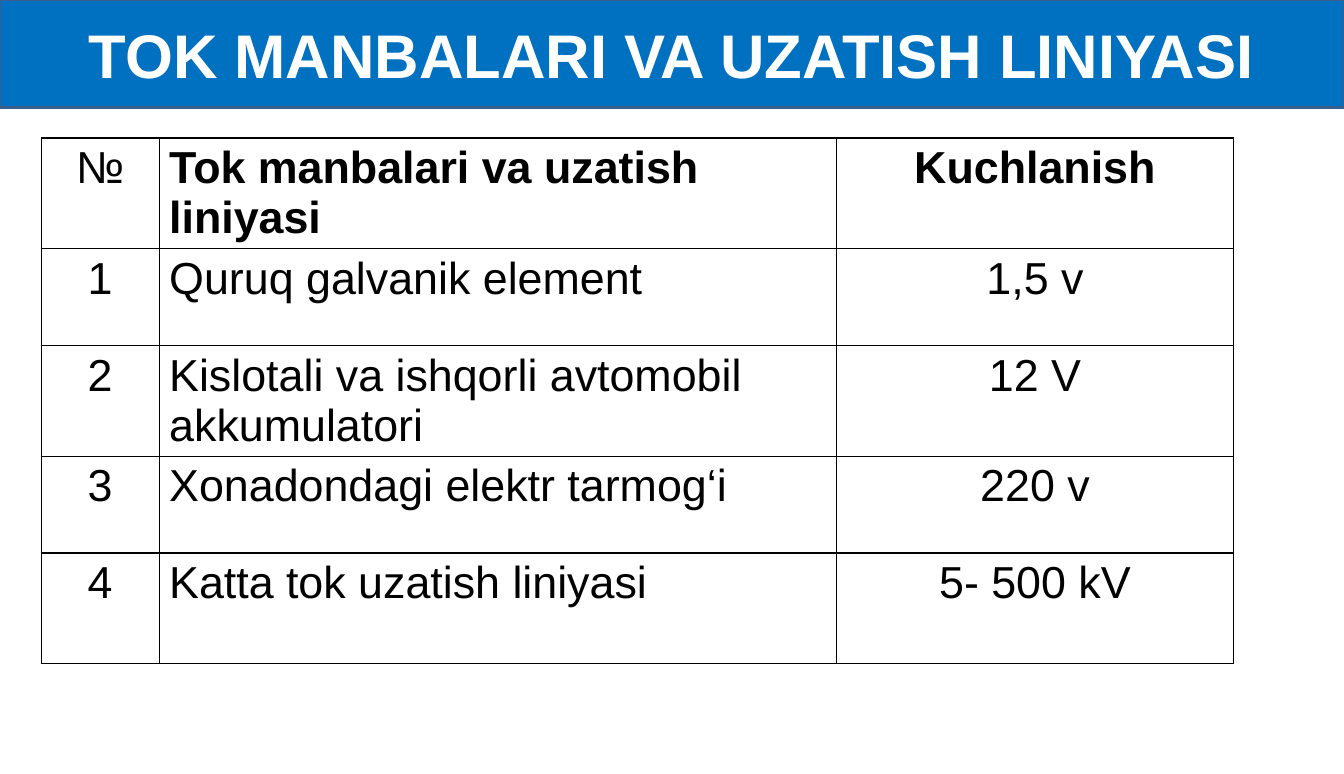
from lxml import etree
from pptx import Presentation
from pptx.dml.color import RGBColor
from pptx.enum.text import MSO_ANCHOR, MSO_AUTO_SIZE, PP_ALIGN
from pptx.oxml.ns import qn
from pptx.util import Cm, Pt

CENTER, LEFT = PP_ALIGN.CENTER, PP_ALIGN.LEFT
MIDDLE = MSO_ANCHOR.MIDDLE
NO_AUTOFIT = MSO_AUTO_SIZE.NONE
TITLE_ONLY = 5

COLORS = {
    "banner": "0070C0",
    "banner_line": "3A5F8C",
    "title": "FFFFFF",
    "text": "000000",
    "border": "000000",
}
SLIDE_WIDTH, SLIDE_HEIGHT = Cm(33.87), Cm(19.51)
BANNER_BOX = (0, 0, SLIDE_WIDTH, Cm(2.72))
TABLE_BOX = (Cm(1.04), Cm(3.48), Cm(30.05), Cm(13.25))
COLUMN_WIDTHS = (2.97, 17.07, 10.01)
ROW_HEIGHTS = (2.79, 2.44, 2.79, 2.44, 2.79)
COLUMN_ALIGNMENTS = (CENTER, LEFT, CENTER)
TITLE_FORMAT = {"name": "Arial", "size": Pt(44), "bold": True}
TABLE_FORMAT = {"name": "Arial", "size": Pt(32)}

TITLE = "TOK MANBALARI VA UZATISH LINIYASI"
ROWS = (
    ("№", "Tok manbalari va uzatish liniyasi", "Kuchlanish"),
    ("1", "Quruq galvanik element", "1,5 v"),
    ("2", "Kislotali va ishqorli avtomobil akkumulatori", "12 V"),
    ("3", "Xonadondagi elektr tarmog‘i", "220 v"),
    ("4", "Katta tok uzatish liniyasi", "5- 500 kV"),
)


def color(name):
    """Return the named palette colour."""
    return RGBColor.from_string(COLORS[name])


def write_text(text_frame, text, alignment, font_format, color_name):
    """Write one formatted paragraph into a text frame."""
    paragraph = text_frame.paragraphs[0]
    paragraph.alignment = alignment
    run = paragraph.add_run()
    run.text = text
    for attribute, value in font_format.items():
        setattr(run.font, attribute, value)
    run.font.color.rgb = color(color_name)


def add_borders(cell):
    """Draw a thin solid line on all four sides of a cell."""
    properties = cell._tc.get_or_add_tcPr()
    for index, side in enumerate(("lnL", "lnR", "lnT", "lnB")):
        line = etree.Element(qn(f"a:{side}"), w=str(Pt(1)))
        fill = etree.SubElement(line, qn("a:solidFill"))
        etree.SubElement(fill, qn("a:srgbClr"), val=COLORS["border"])
        properties.insert(index, line)


def add_banner(slide, box):
    """Turn the title placeholder into a coloured banner filling the box."""
    title = slide.shapes.title
    title.left, title.top, title.width, title.height = box
    title.fill.solid()
    title.fill.fore_color.rgb = color("banner")
    title.line.color.rgb = color("banner_line")
    title.line.width = Pt(2)
    frame_format = {
        "word_wrap": True,
        "auto_size": NO_AUTOFIT,
        "vertical_anchor": MIDDLE,
    }
    for attribute, value in frame_format.items():
        setattr(title.text_frame, attribute, value)
    write_text(title.text_frame, TITLE, CENTER, TITLE_FORMAT, "title")


def add_voltage_table(slide, box):
    """Add the table of current sources and voltages in the box."""
    table = slide.shapes.add_table(len(ROWS), len(COLUMN_WIDTHS), *box).table
    table.first_row = False
    table.horz_banding = False
    for column, width in zip(table.columns, COLUMN_WIDTHS):
        column.width = Cm(width)
    for row, height in zip(table.rows, ROW_HEIGHTS):
        row.height = Cm(height)
    for row_index, texts in enumerate(ROWS):
        for column_index, text in enumerate(texts):
            cell = table.cell(row_index, column_index)
            cell.fill.background()
            add_borders(cell)
            bold = row_index == 0 and column_index > 0
            write_text(cell.text_frame, text, COLUMN_ALIGNMENTS[column_index],
                       {**TABLE_FORMAT, "bold": bold}, "text")


def main():
    """Build the slide and save the presentation."""
    presentation = Presentation()
    presentation.slide_width = SLIDE_WIDTH
    presentation.slide_height = SLIDE_HEIGHT
    layout = presentation.slide_layouts[TITLE_ONLY]
    slide = presentation.slides.add_slide(layout)
    add_banner(slide, BANNER_BOX)
    add_voltage_table(slide, TABLE_BOX)
    presentation.save("out.pptx")


if __name__ == "__main__":
    main()
